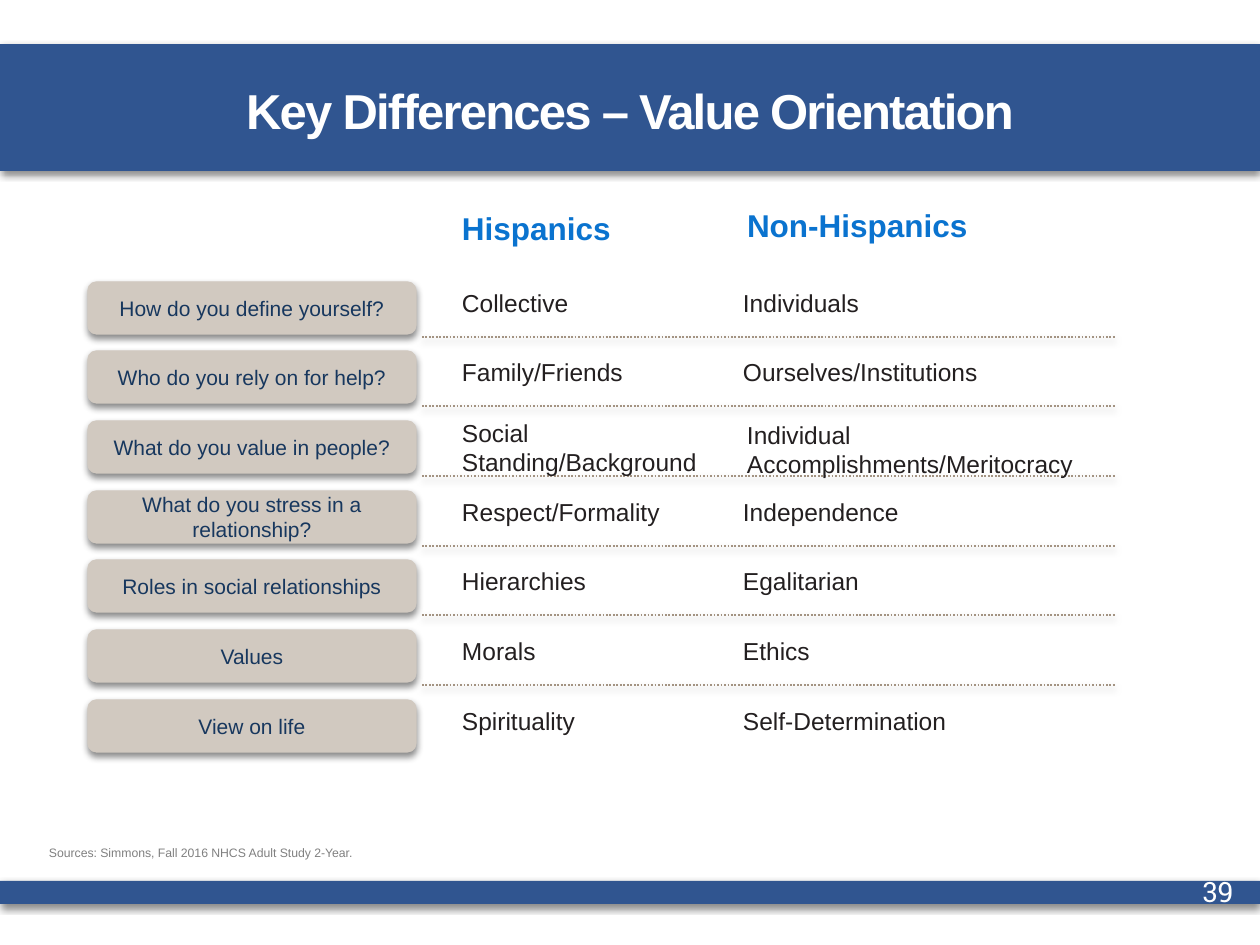
"""Build the slide on key differences in value orientation."""
from lxml.etree import SubElement as Sub
from pptx import Presentation
from pptx.dml.color import RGBColor as RGB
from pptx.enum.dml import MSO_LINE as Dash
from pptx.enum.shapes import MSO_CONNECTOR as Conn, MSO_SHAPE as Kind
from pptx.enum.text import MSO_ANCHOR as Anchor, MSO_AUTO_SIZE as Auto, PP_ALIGN as Align
from pptx.oxml.ns import qn
from pptx.util import Pt

TITLE = "Key Differences – Value Orientation"
SOURCE = "Sources: Simmons, Fall 2016 NHCS Adult Study 2-Year."
PAGE = "39"
HEADS = [("Hispanics", 462, 203), ("Non-Hispanics", 747, 200)]
ROWS = [
    ("How do you define yourself?", "Collective", "Individuals"),
    ("Who do you rely on for help?", "Family/Friends", "Ourselves/Institutions"),
    ("What do you value in people?", "Social Standing/Background",
     "Individual Accomplishments/Meritocracy"),
    ("What do you stress in a relationship?", "Respect/Formality", "Independence"),
    ("Roles in social relationships", "Hierarchies", "Egalitarian"),
    ("Values", "Morals", "Ethics"),
    ("View on life", "Spirituality", "Self-Determination"),
]
LONG = {ROWS[2][1]: (0, -9), ROWS[2][2]: (4, -7)}
COLS = [(462, 276), (743, 353)]
TOP, SPAN = 282, 418
BLUE, SKY, NAVY, INK = "305590", "0A73CF", "17375E", "231F20"
SAND, TAN, GREY, WHITE = "D1C9C0", "A39382", "808080", "FFFFFF"


def px(num):
    return round(num * 914400 / 126)


def hue(code):
    return RGB.from_string(code)


def shade(shape, alpha=45):
    fx = Sub(shape._element.spPr, qn("a:effectLst"))
    drop = Sub(fx, qn("a:outerShdw"), blurRad=str(Pt(4)), dist=str(Pt(2)),
               dir="5400000", algn="ctr", rotWithShape="0")
    tint = Sub(drop, qn("a:srgbClr"), val="000000")
    Sub(tint, qn("a:alpha"), val=str(alpha * 1000))


def paint(shape, fill, line=None):
    shape.fill.solid()
    shape.fill.fore_color.rgb = hue(fill)
    if line:
        shape.line.color.rgb = hue(line)
        shape.line.width = Pt(0.75)
    else:
        shape.line.fill.background()
    shade(shape)


def write(shape, text, size, color, bold=False, font="Arial", align=Align.LEFT,
          anchor=Anchor.TOP, pad=(0, 0, 0, 0), lead=None, track=None):
    frame = shape.text_frame
    frame.word_wrap, frame.auto_size = True, Auto.NONE
    frame.vertical_anchor = anchor
    (frame.margin_left, frame.margin_top,
     frame.margin_right, frame.margin_bottom) = map(px, pad)
    para = frame.paragraphs[0]
    para.alignment = align
    if lead:
        para.line_spacing = Pt(lead)
    run = para.add_run()
    run.text = text
    run.font.size, run.font.bold, run.font.name = Pt(size), bold, font
    run.font.color.rgb = hue(color)
    if track:
        run.font._element.set("spc", str(track * 100))


def main():
    deck = Presentation()
    deck.slide_width, deck.slide_height = px(1260), px(945)
    slide = deck.slides.add_slide(deck.slide_layouts[5])
    shapes = slide.shapes

    def label(box, text, size, color, **form):
        write(shapes.add_textbox(*map(px, box)), text, size, color, **form)

    paint(shapes.add_shape(Kind.RECTANGLE, *map(px, (0, 881, 1260, 23))), BLUE)
    title = shapes.title
    title.left, title.top, title.width, title.height = map(px, (0, 44, 1260, 127))
    paint(title, BLUE)
    write(title, TITLE, 28, WHITE, bold=True, align=Align.CENTER,
          anchor=Anchor.MIDDLE, pad=(13, 6, 13, 6), lead=36, track=-1)

    label((40, 840, 1062, 38), SOURCE, 7, GREY, pad=(9, 5, 9, 5))
    for text, left, top in HEADS:
        label((left, top, 297, 50), text, 18, SKY, bold=True, pad=(0, 6, 13, 6))

    for num, (ask, *views) in enumerate(ROWS):
        top = TOP + SPAN * num // (len(ROWS) - 1)
        if num < len(ROWS) - 1:
            ends = map(px, (422, top + 55, 1115, top + 55))
            rule = shapes.add_connector(Conn.STRAIGHT, *ends)
            rule.line.color.rgb = hue(TAN)
            rule.line.width, rule.line.dash_style = Pt(1), Dash.ROUND_DOT
            shade(rule, 35)
        for text, (left, wide) in zip(views, COLS):
            right, down = LONG.get(text, (0, 0))
            tall = 59 if text in LONG else 30
            label((left + right, top + 6 + down, wide, tall), text, 14, INK)
        pill = shapes.add_shape(Kind.ROUNDED_RECTANGLE, *map(px, (88, top, 328, 52)))
        paint(pill, SAND, SAND)
        write(pill, ask, 12, NAVY, align=Align.CENTER, anchor=Anchor.MIDDLE)

    label((1176, 861, 84, 60), PAGE, 16, WHITE, font="Roboto Slab",
          align=Align.CENTER, anchor=Anchor.MIDDLE, pad=(6, 6, 6, 6))
    deck.save("out.pptx")


if __name__ == "__main__":
    main()
